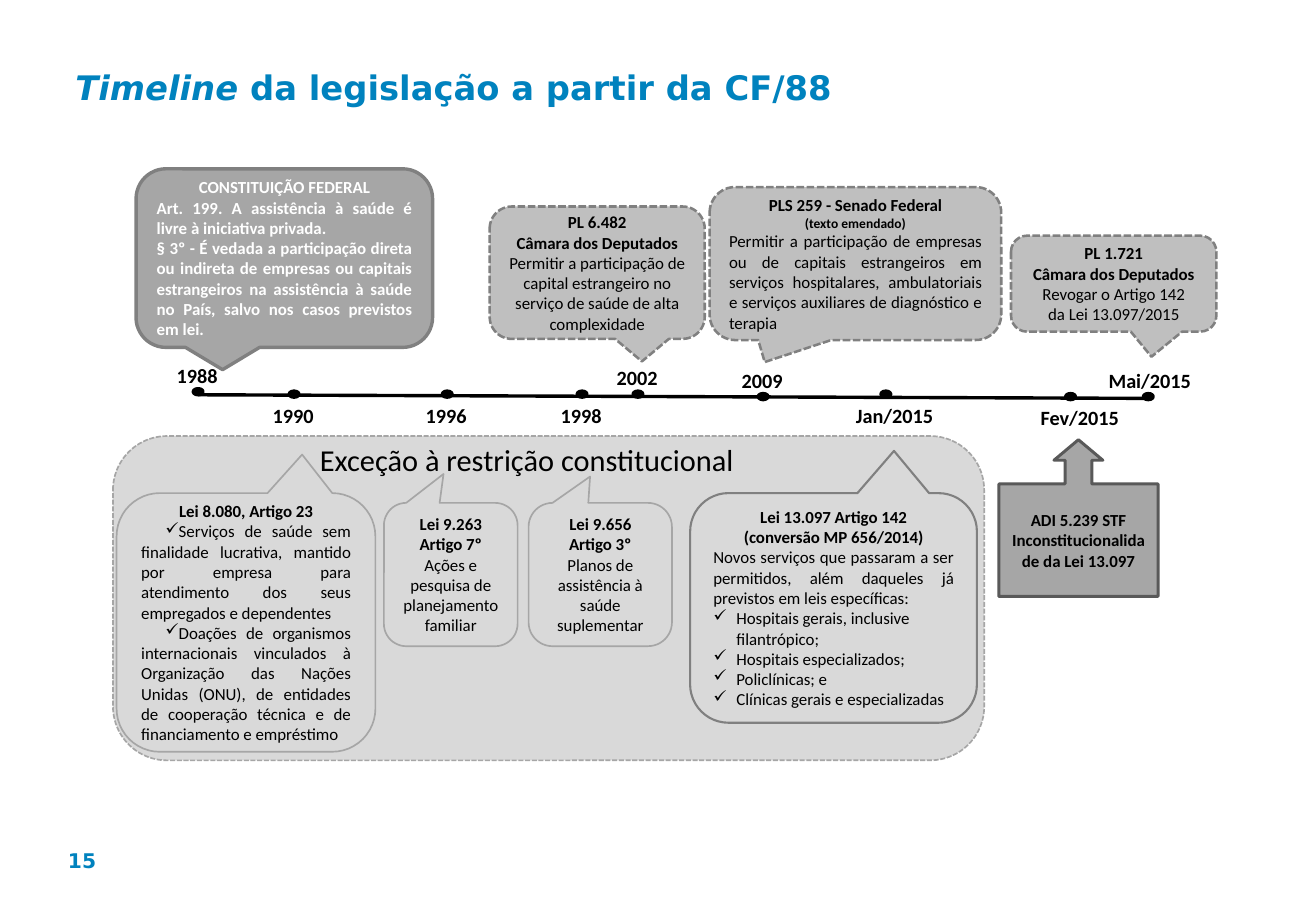
import pptx
import pptx.dml.color
import pptx.enum.dml
import pptx.enum.shapes
import pptx.enum.text
import pptx.oxml.ns
import pptx.util
from lxml import etree

Inches = pptx.util.Inches
RGBColor = pptx.dml.color.RGBColor
SHAPE = pptx.enum.shapes.MSO_SHAPE
ALIGN = pptx.enum.text.PP_ALIGN
MIDDLE = pptx.enum.text.MSO_ANCHOR.MIDDLE
DASH = pptx.enum.dml.MSO_LINE.SQUARE_DOT

BLUE = RGBColor(0x00, 0x82, 0xBE)
BLACK = RGBColor(0x00, 0x00, 0x00)
WHITE = RGBColor(0xFF, 0xFF, 0xFF)
PALE = RGBColor(0xD9, 0xD9, 0xD9)
LIGHT = RGBColor(0xBF, 0xBF, 0xBF)
SILVER = RGBColor(0xA6, 0xA6, 0xA6)
GRAY = RGBColor(0x80, 0x80, 0x80)
DARK = RGBColor(0x59, 0x59, 0x59)

BOLD = {"bold": True}
JUSTIFIED = {"align": ALIGN.JUSTIFY}
INDENTED_TICK = {"align": ALIGN.JUSTIFY, "tick": (0, 0.2)}
HANGING_TICK = {"align": ALIGN.LEFT, "tick": (0.19, -0.19)}
PROPOSAL = {"fill": LIGHT, "line": GRAY, "width": 1.5, "dash": DASH}


def write(frame, text, size=10, color=BLACK, bold=False, italic=False,
          font="Calibri", align=ALIGN.CENTER, tick=None, same_line=False):
    """Add a paragraph, or a run to the last one; tick is (margin, indent)."""
    paragraph = frame.paragraphs[-1]
    if paragraph.runs and not same_line:
        paragraph = frame.add_paragraph()
    paragraph.alignment = align
    if tick:
        properties = paragraph._p.get_or_add_pPr()
        properties.set("marL", str(Inches(tick[0])))
        properties.set("indent", str(Inches(tick[1])))
        bullet = etree.SubElement(properties, pptx.oxml.ns.qn("a:buChar"))
        bullet.set("char", "✓")
    run = paragraph.add_run()
    run.text = text
    run.font.size = pptx.util.Pt(size)
    run.font.name = font
    run.font.bold = bold
    run.font.italic = italic
    run.font.color.rgb = color


def add_label(slide, box, text, wrap=False, **text_format):
    frame = slide.shapes.add_textbox(*map(Inches, box)).text_frame
    frame.word_wrap = wrap
    write(frame, text, **text_format)
    return frame


def add_block(slide, kind, box, fill, line, width, dash=None,
              adjustments=(), paragraphs=()):
    block = slide.shapes.add_shape(kind, *map(Inches, box))
    block.shadow.inherit = False
    block.fill.solid()
    block.fill.fore_color.rgb = fill
    block.line.color.rgb = line
    block.line.width = pptx.util.Pt(width)
    if dash:
        block.line.dash_style = dash
    for index, value in enumerate(adjustments):
        block.adjustments[index] = value
    block.text_frame.word_wrap = True
    block.text_frame.vertical_anchor = MIDDLE
    for text, text_format in paragraphs:
        write(block.text_frame, text, **text_format)


def add_callout(slide, box, tip, paragraphs, **style):
    """Place a rounded balloon; tip is its point relative to its centre."""
    add_block(slide, SHAPE.ROUNDED_RECTANGULAR_CALLOUT, box,
              adjustments=(*tip, 0.167), paragraphs=paragraphs, **style)


def add_heading(slide, left, top, width, height):
    title = slide.shapes.title
    title.left, title.top = Inches(left), Inches(top)
    title.width, title.height = Inches(width), Inches(height)
    frame = title.text_frame
    frame.auto_size = pptx.enum.text.MSO_AUTO_SIZE.NONE
    frame.vertical_anchor = MIDDLE
    style = dict(size=20, color=BLUE, bold=True, font="DejaVu Sans", align=ALIGN.LEFT)
    write(frame, "Timeline", italic=True, **style)
    write(frame, " da legislação a partir da CF/88", same_line=True, **style)


def add_proposals(slide, left, top):
    """Constitution and the bills above the timeline."""
    add_callout(slide, (left, top, 2.44, 1.47), (-0.208, 0.625), [
        ("CONSTITUIÇÃO FEDERAL", {"bold": True, "color": WHITE}),
        *[(text, {"bold": True, "color": WHITE, "align": ALIGN.JUSTIFY}) for text in (
            "Art. 199. A assistência à saúde é livre à iniciativa privada.",
            "§ 3º - É vedada a participação direta ou indireta de empresas ou capitais "
            "estrangeiros na assistência à saúde no País, salvo nos casos previstos em lei.")],
    ], fill=SILVER, line=GRAY, width=2)
    add_callout(slide, (left + 2.91, top + 0.31, 1.77, 1.09), (0.208, 0.67), [
        ("PL 6.482", BOLD),
        ("Câmara dos Deputados", BOLD),
        ("Permitir a participação de capital estrangeiro no serviço de saúde de alta "
         "complexidade", {}),
    ], **PROPOSAL)
    add_callout(slide, (left + 4.72, top + 0.15, 2.4, 1.26), (-0.311, 0.644), [
        ("PLS 259 - Senado Federal", BOLD),
        ("(texto emendado)", {"bold": True, "size": 8}),
        ("Permitir a participação de empresas ou de capitais estrangeiros em serviços "
         "hospitalares, ambulatoriais e serviços auxiliares de diagnóstico e terapia",
         JUSTIFIED),
    ], **PROPOSAL)
    add_callout(slide, (left + 7.2, top + 0.55, 1.69, 0.79), (0.184, 0.762), [
        ("PL 1.721", BOLD),
        ("Câmara dos Deputados", BOLD),
        ("Revogar o Artigo 142", {}),
        ("da Lei 13.097/2015", {}),
    ], **PROPOSAL)


def add_exceptions(slide, left, top, width, height):
    """Panel with the laws that make exceptions."""
    add_block(slide, SHAPE.ROUNDED_RECTANGLE, (left, top, width, height),
              PALE, SILVER, 1, DASH)
    law = {"fill": PALE, "line": SILVER, "width": 1}
    add_callout(slide, (left + 0.03, top + 0.47, 2.13, 2.13), (0.217, -0.649), [
        ("Lei 8.080, Artigo 23", BOLD),
        ("Serviços de saúde sem finalidade lucrativa, mantido por empresa para "
         "atendimento dos seus empregados e dependentes", INDENTED_TICK),
        ("Doações de organismos internacionais vinculados à Organização das Nações "
         "Unidas (ONU), de entidades de cooperação técnica e de financiamento e "
         "empréstimo", INDENTED_TICK),
    ], **law)
    for offset, balloon_width, tip, number, article, subject in (
            (2.23, 1.1, (-0.054, -0.702), "Lei 9.263", "Artigo 7º",
             "Ações e pesquisa de planejamento familiar"),
            (3.42, 1.18, (-0.071, -0.684), "Lei 9.656", "Artigo 3º",
             "Planos de assistência à saúde suplementar")):
        add_callout(slide, (left + offset, top + 0.55, balloon_width, 1.18), tip,
                    [(number, BOLD), (article, BOLD), (subject, {})], **law)
    add_callout(slide, (left + 4.75, top + 0.47, 2.36, 1.89), (0.211, -0.684), [
        ("Lei 13.097 Artigo 142", BOLD),
        ("(conversão MP 656/2014)", BOLD),
        ("Novos serviços que passaram a ser permitidos, além daqueles já previstos em "
         "leis específicas:", JUSTIFIED),
        *[(text, HANGING_TICK) for text in (
            "Hospitais gerais, inclusive filantrópico;", "Hospitais especializados;",
            "Policlínicas; e", "Clínicas gerais e especializadas")],
    ], fill=PALE, line=GRAY, width=1.25)
    add_label(slide, (left + 0.5, top - 0.01, 5.81, 0.4),
              "Exceção à restrição constitucional", wrap=True, size=18)


def add_court_case(slide, *box):
    add_block(slide, SHAPE.UP_ARROW_CALLOUT, box, SILVER, DARK, 1.75,
              adjustments=(0.171, 0.156, 0.131, 0.718),
              paragraphs=[("ADI 5.239 STF", BOLD),
                          ("Inconstitucionalidade da Lei 13.097", BOLD)])


def add_timeline(slide, left, top, width, drop):
    axis = slide.shapes.add_connector(
        pptx.enum.shapes.MSO_CONNECTOR.STRAIGHT,
        *map(Inches, (left, top, left + width, top + drop)))
    axis.line.color.rgb = BLACK
    axis.line.width = pptx.util.Pt(2)
    etree.SubElement(axis._element.spPr, pptx.oxml.ns.qn("a:effectLst"))
    above, below = -0.28, 0.03
    # date, dot offset across and down, label offset, label width and shift
    for date, across, down, label_drop, label_width, shift in (
            ("1988", 0, -0.02, above, 0.55, 0),
            ("1990", 0.79, 0, below, 0.55, 0),
            ("1996", 2.05, 0, below, 0.55, 0),
            ("1998", 3.16, 0, below, 0.55, 0),
            ("2002", 3.62, 0, above, 0.55, 0),
            ("2009", 4.65, 0.02, above, 0.55, 0),
            ("Jan/2015", 5.66, 0, below, 0.85, 0.08),
            ("Fev/2015", 7.18, 0.02, below, 0.85, 0.08),
            ("Mai/2015", 7.82, 0.02, above, 0.89, 0.02)):
        x, y = left + across, top + down
        add_block(slide, SHAPE.OVAL, (x - 0.04, y - 0.03, 0.08, 0.05), BLACK, BLACK, 2)
        add_label(slide, (x + shift - label_width / 2, y + label_drop - 0.01,
                          label_width, 0.3),
                  date, size=12, bold=True, align=ALIGN.LEFT)


def main():
    deck = pptx.Presentation()
    deck.slide_width, deck.slide_height = Inches(10.83), Inches(7.5)
    slide = deck.slides.add_slide(deck.slide_layouts[5])
    add_heading(slide, 0.52, 0.5, 6.52, 0.44)
    add_exceptions(slide, 0.93, 3.59, 7.17, 2.67)
    add_proposals(slide, 1.12, 1.39)
    add_court_case(slide, 8.22, 3.62, 1.31, 1.29)
    add_timeline(slide, 1.63, 3.25, 7.85, 0.03)
    number = add_label(slide, (0.16, 6.88, 0.73, 0.4), "15", wrap=True, size=12,
                       color=BLUE, bold=True, font="DejaVu Sans", align=ALIGN.RIGHT)
    number.vertical_anchor = MIDDLE
    deck.save("out.pptx")


if __name__ == "__main__":
    main()
